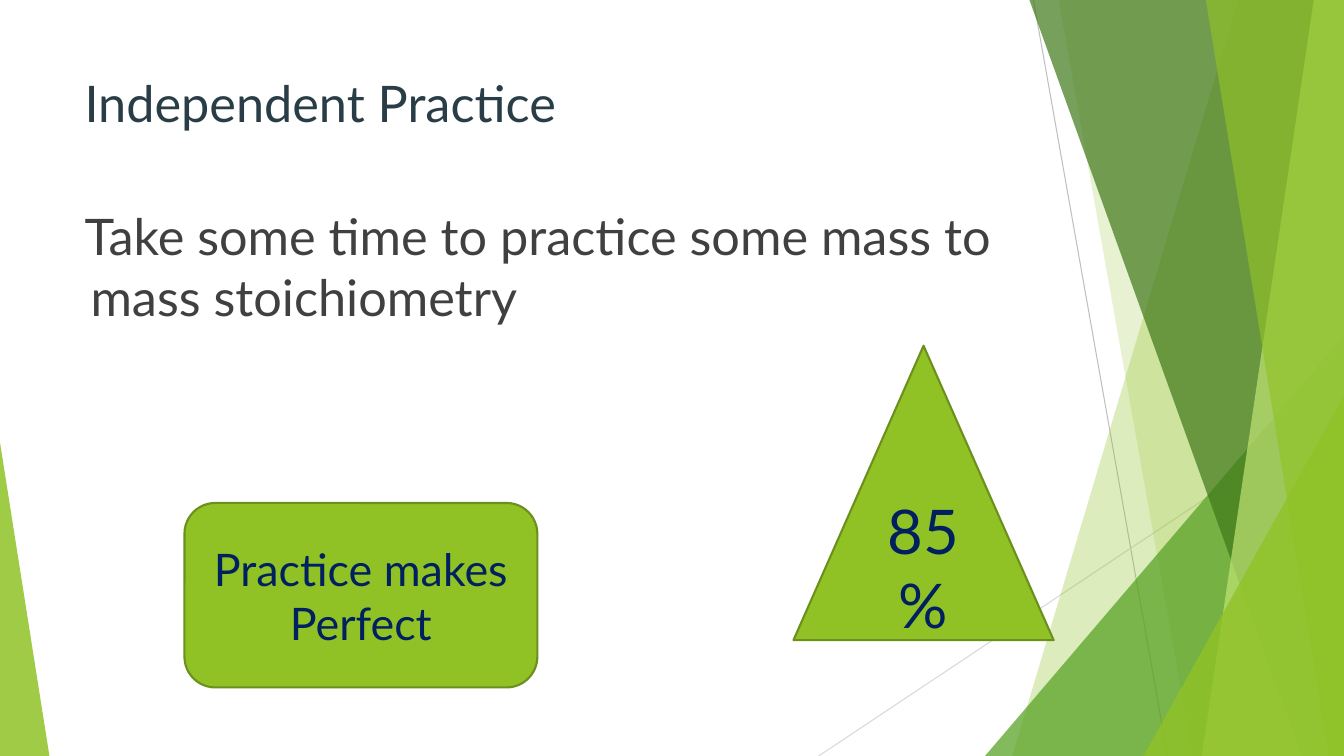
from lxml.etree import SubElement
from pptx import Presentation
from pptx.dml.color import RGBColor
from pptx.enum.shapes import MSO_CONNECTOR, MSO_SHAPE
from pptx.enum.text import MSO_ANCHOR, PP_ALIGN
from pptx.oxml.ns import qn
from pptx.util import Inches, Pt

W, H = 13.33, 7.5
FONT = "Lato"
COLORS = {
    "lime": "90C226", "pale": "C0E474", "green": "54A021", "forest": "3F7819",
    "edge": "6B901C", "slate": "293D46", "gray": "404040", "navy": "002060",
    "rule": "BFBFBF", "faint": "D9D9D9",
}

# Content: text, left, top, width, height, size, colour
TEXTS = [
    ("Independent Practice", 0.74, 0.67, 9.4, 1.44, 36, "slate"),
    ("Take some time to practice some mass to mass stoichiometry",
     0.74, 1.99, 9.77, 5.25, 36, "gray"),
]
# Preset, text, left, top, width, height, size
BADGES = [
    (MSO_SHAPE.ROUNDED_RECTANGLE, "Practice makes Perfect", 1.83, 4.99, 3.5, 1.83, 32),
    (MSO_SHAPE.ISOSCELES_TRIANGLE, "85%", 7.87, 3.43, 2.58, 2.92, 44),
]

# Decoration: thin lines from (x, y) to (x, y)
LINES = [((10.25, 0), (11.58, H), "rule"), ((W, 4.03), (8.12, H), "faint")]
# Ribbons reach the right edge: left x at top, left x at bottom
# Corners stand on the bottom edge: left, width, height, apex (0 left, 1 right)
FACETS = [
    ("ribbon", (12.28, 10.04), "lime", 30),
    ("ribbon", (10.5, 11.83), "lime", 20),
    ("corner", (9.77, 3.56, 4.17, 1), "green", 72),
    ("ribbon", (10.21, 12.91), "forest", 70),
    ("ribbon", (13.03, 11.92), "pale", 70),
    ("ribbon", (11.96, 13.18), "lime", 65),
    ("corner", (11.34, 1.99, 3.57, 1), "lime", 80),
    ("corner", (0, 0.49, 3.11, 0), "lime", 85),
]

prs = Presentation()
prs.slide_width, prs.slide_height = Inches(W), Inches(H)
s = prs.slides.add_slide(prs.slide_layouts[6])


def rgb(name):
    return RGBColor.from_string(COLORS[name])


def paint(sp, color, alpha=100):
    sp.shadow.inherit = False
    sp.fill.solid()
    sp.fill.fore_color.rgb = rgb(color)
    if alpha < 100:
        clr = sp.fill._xPr.find(qn("a:solidFill"))[0]
        SubElement(clr, qn("a:alpha")).set("val", str(alpha * 1000))


def write(sp, text, size, color):
    tf = sp.text_frame
    tf.word_wrap = True
    p = tf.paragraphs[0]
    r = p.add_run()
    r.text = text
    r.font.name, r.font.size = FONT, Pt(size)
    r.font.color.rgb = rgb(color)
    return tf, p


def ribbon(top_x, bottom_x):
    fb = s.shapes.build_freeform(Inches(top_x), 0)
    corners = [(W, 0), (W, H), (bottom_x, H)]
    fb.add_line_segments([(Inches(x), Inches(y)) for x, y in corners])
    return fb.convert_to_shape()


def corner(left, width, height, apex):
    sp = s.shapes.add_shape(MSO_SHAPE.ISOSCELES_TRIANGLE, Inches(left),
                            Inches(H - height), Inches(width), Inches(height))
    sp.adjustments[0] = apex
    return sp


# Background lines
for start, end, color in LINES:
    ln = s.shapes.add_connector(MSO_CONNECTOR.STRAIGHT,
                                *[Inches(v) for v in start + end])
    ln.line.color.rgb, ln.line.width = rgb(color), Pt(0.75)
    SubElement(ln._element.spPr, qn("a:effectLst"))

# Translucent facets
for kind, geometry, color, alpha in FACETS:
    sp = (ribbon if kind == "ribbon" else corner)(*geometry)
    paint(sp, color, alpha)
    sp.line.fill.background()

# Title and body
for text, *box, size, color in TEXTS:
    sp = s.shapes.add_textbox(*[Inches(v) for v in box])
    tf, p = write(sp, text, size, color)
    tf.vertical_anchor = MSO_ANCHOR.TOP
    if color == "gray":
        pPr = p._p.get_or_add_pPr()
        pPr.set("marL", str(Inches(0.06)))
        pPr.set("indent", str(Inches(-0.06)))

# Badges
for preset, text, *box, size in BADGES:
    sp = s.shapes.add_shape(preset, *[Inches(v) for v in box])
    paint(sp, "lime")
    sp.line.color.rgb, sp.line.width = rgb("edge"), Pt(1.5)
    tf, p = write(sp, text, size, "navy")
    tf.vertical_anchor = MSO_ANCHOR.MIDDLE
    p.alignment = PP_ALIGN.CENTER

prs.save("out.pptx")
